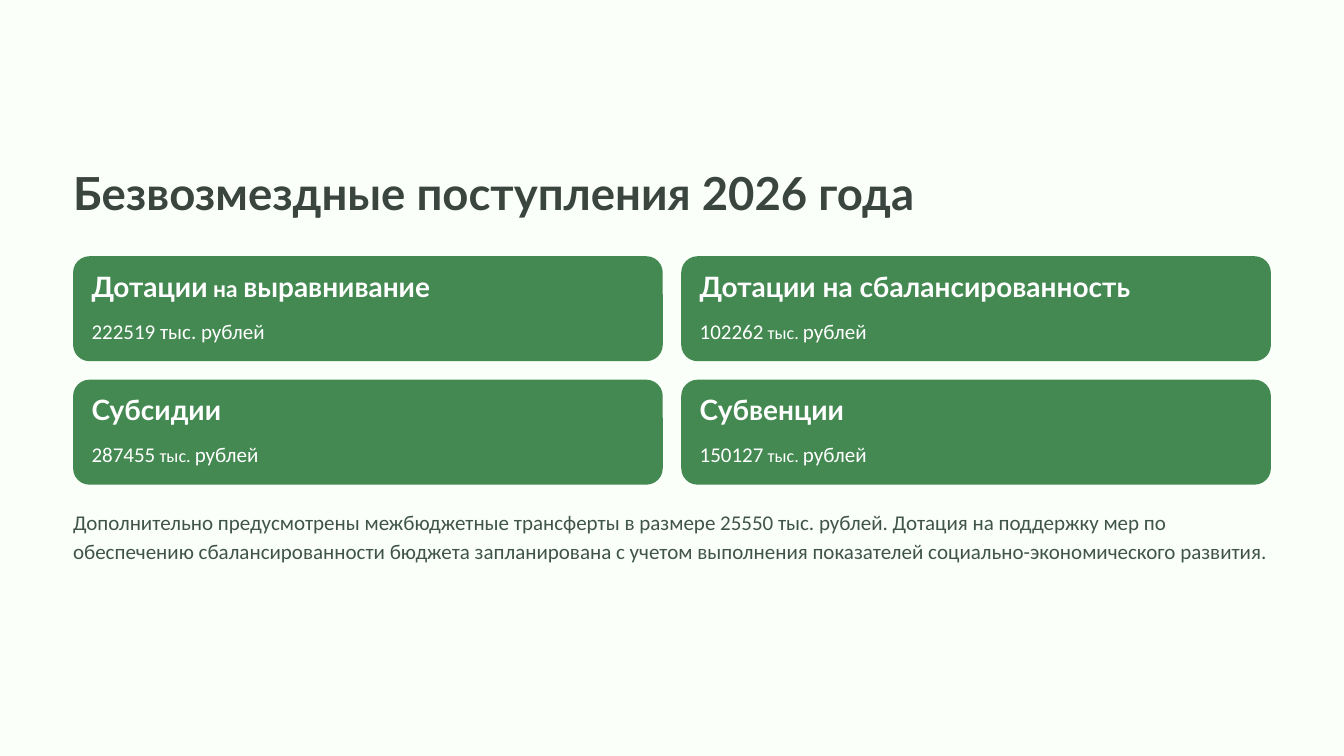
from dataclasses import dataclass

from pptx import Presentation
from pptx.dml.color import RGBColor
from pptx.enum.shapes import MSO_SHAPE
from pptx.enum.text import MSO_ANCHOR, MSO_AUTO_SIZE, PP_ALIGN
from pptx.util import Inches, Pt


@dataclass(frozen=True)
class Theme:
    background: str = "FAFFFA"
    card: str = "438951"
    title: tuple = ("Lato", 39, True, "3B4540", 48.5)
    heading: tuple = ("Lato", 24, True, "FFFFFF", 24)
    amount: tuple = ("Calibri", 18, False, "FFFFFF", 25)
    note: tuple = ("Calibri", 18, False, "405449", 25)
    small_heading: float = 19.5
    small_amount: float = 15.5


THEME = Theme()

# Each text is a list of (words, size); None keeps the size of the style
RUBLES = [(" тыс. ", THEME.small_amount), ("рублей", None)]
CARDS = [
    ([("Дотации", None), (" на ", THEME.small_heading), ("выравнивание", None)],
     [("222519 тыс. рублей", None)]),
    ([("Дотации на сбалансированность", None)], [("102262", None)] + RUBLES),
    ([("Субсидии", None)], [("287455", None)] + RUBLES),
    ([("Субвенции", None)], [("150127", None)] + RUBLES),
]
NOTE = ("Дополнительно предусмотрены межбюджетные трансферты в размере 25550 тыс. рублей. "
        "Дотация на поддержку мер по обеспечению сбалансированности бюджета запланирована "
        "с учетом выполнения показателей социально-экономического развития.")


def set_attrs(obj, values):
    for name, value in values.items():
        setattr(obj, name, value)


def place(sp, left, top, width, height):
    box = dict(left=left, top=top, width=width, height=height)
    set_attrs(sp, {name: Inches(value) for name, value in box.items()})


def write(sp, runs, style, wrap=False):
    font, size, bold, color, spacing = style
    tf = sp.text_frame
    set_attrs(tf, dict(margin_left=0, margin_top=0, margin_right=0, margin_bottom=0,
                       word_wrap=wrap, auto_size=MSO_AUTO_SIZE.NONE,
                       vertical_anchor=MSO_ANCHOR.TOP))
    p = tf.paragraphs[0]
    set_attrs(p, dict(alignment=PP_ALIGN.LEFT, line_spacing=Pt(spacing)))
    for text, run_size in runs:
        r = p.add_run()
        r.text = text
        set_attrs(r.font, dict(name=font, size=Pt(run_size or size), bold=bold))
        r.font.color.rgb = RGBColor.from_string(color)


def add_text(s, box, runs, style, wrap=False):
    sp = s.shapes.add_textbox(*map(Inches, box))
    write(sp, runs, style, wrap)


def add_title(s, box, text):
    sp = s.shapes.title
    place(sp, *box)
    write(sp, [(text, None)], THEME.title)


def add_card(s, box, heading, amount, pad=0.22):
    left, top, width, height = box
    sp = s.shapes.add_shape(MSO_SHAPE.ROUNDED_RECTANGLE, *map(Inches, box))
    sp.adjustments[0] = 0.156
    sp.shadow.inherit = False
    sp.fill.solid()
    sp.fill.fore_color.rgb = RGBColor.from_string(THEME.card)
    sp.line.fill.background()
    inner = width - 2 * pad
    add_text(s, (left + pad, top + pad, inner, 0.34), heading, THEME.heading)
    add_text(s, (left + pad, top + 0.69, inner, 0.35), amount, THEME.amount)


def add_cards(s, box, cards, columns=2, gap=0.22):
    left, top, width, height = box
    rows = len(cards) // columns
    card_w = (width - gap * (columns - 1)) / columns
    card_h = (height - gap * (rows - 1)) / rows
    for i, (heading, amount) in enumerate(cards):
        row, column = divmod(i, columns)
        add_card(s, (left + column * (card_w + gap), top + row * (card_h + gap),
                     card_w, card_h), heading, amount)


def main():
    prs = Presentation()
    set_attrs(prs, dict(slide_width=Inches(16), slide_height=Inches(9)))
    s = prs.slides.add_slide(prs.slide_layouts.get_by_name("Title Only"))

    # Background
    fill = s.background.fill
    fill.solid()
    fill.fore_color.rgb = RGBColor.from_string(THEME.background)

    # Title, grid of cards, closing note
    left, width = 0.87, 14.26
    add_title(s, (left, 1.94, width, 0.68), "Безвозмездные поступления 2026 года")
    add_cards(s, (left, 3.05, width, 2.72), CARDS)
    add_text(s, (left, 6.02, width, 1.04), [(NOTE, None)], THEME.note, wrap=True)

    prs.save("out.pptx")


if __name__ == "__main__":
    main()
